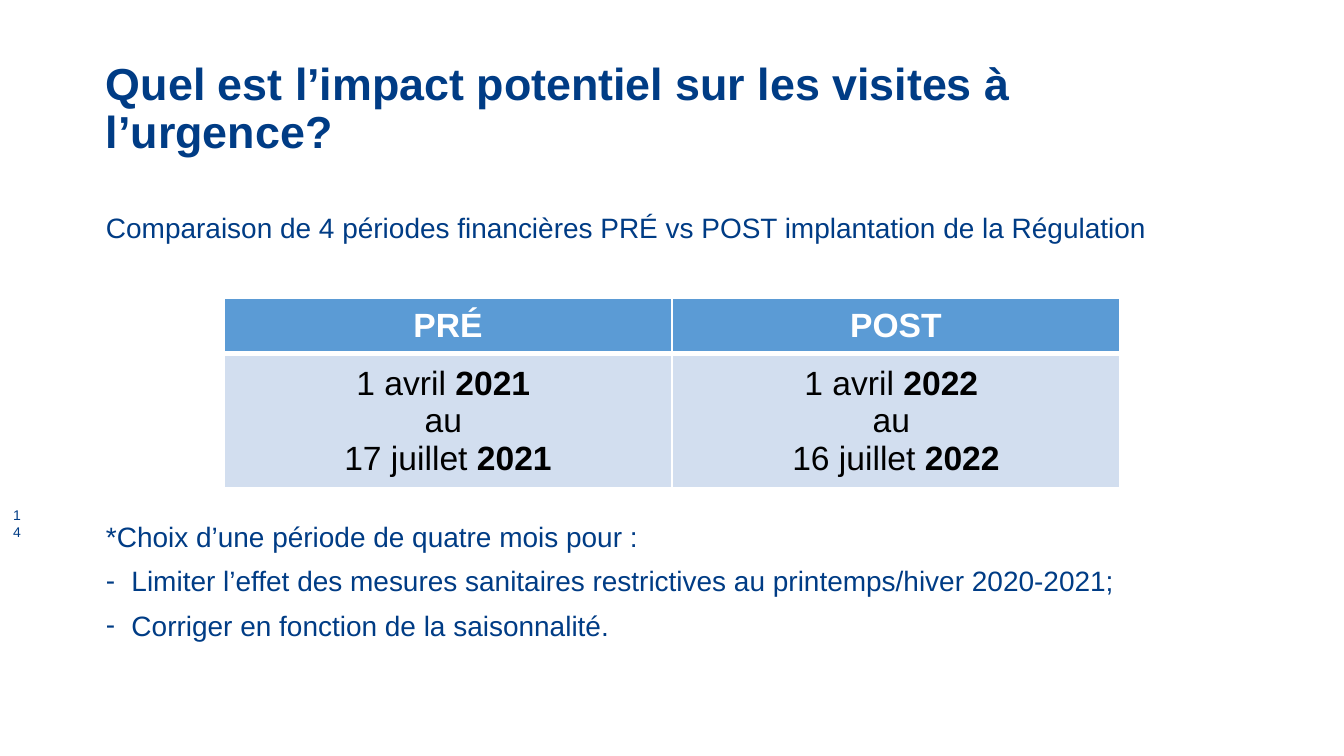
import pptx
import pptx.util
import pptx.dml.color
import pptx.enum.text
import pptx.oxml.ns
import lxml.etree

RGB = pptx.dml.color.RGBColor
ALIGN = pptx.enum.text.PP_ALIGN
ANCHOR = pptx.enum.text.MSO_ANCHOR
Pt = pptx.util.Pt
qn = pptx.oxml.ns.qn

NAVY = RGB(0x00, 0x3C, 0x85)
BLUE = RGB(0x5B, 0x9B, 0xD5)
PALE = RGB(0xD2, 0xDE, 0xEF)
WHITE = RGB(0xFF, 0xFF, 0xFF)
BLACK = RGB(0x00, 0x00, 0x00)

TITLE = "Quel est l’impact potentiel sur les visites à l’urgence?"
INTRO = "Comparaison de 4 périodes financières PRÉ vs POST implantation de la Régulation"
NOTE = "*Choix d’une période de quatre mois pour :"
GOALS = [
    "Limiter l’effet des mesures sanitaires restrictives au printemps/hiver 2020-2021;",
    "Corriger en fonction de la saisonnalité.",
]
NUMBER = "14"
HEADS = ["PRÉ", "POST"]
DATES = [
    [[("1 avril ", False), ("2021 ", True)], [("au ", False)],
     [("17 juillet ", False), ("2021", True)]],
    [[("1 avril ", False), ("2022 ", True)], [("au ", False)],
     [("16 juillet ", False), ("2022", True)]],
]

deck = pptx.Presentation()
deck.slide_width = Pt(720)
deck.slide_height = Pt(405)
slide = deck.slides.add_slide(deck.slide_layouts[6])


def wide(share):
    return round(deck.slide_width * share / 100)


def high(share):
    return round(deck.slide_height * share / 100)


def add_run(para, text, size, color, bold=False):
    run = para.add_run()
    run.text = text
    font = run.font
    font.name, font.size, font.bold = "Arial", Pt(size), bold
    font.color.rgb = color


def add_mark(para, mark):
    props = para._p.get_or_add_pPr()
    props.set("marL", str(pptx.util.Inches(0.19)))
    props.set("indent", str(-pptx.util.Inches(0.19)))
    lxml.etree.SubElement(props, qn("a:buFont")).set("typeface", "Arial")
    lxml.etree.SubElement(props, qn("a:buChar")).set("char", mark)


def add_box(left, top, width, height, lines, size, bold=False,
            anchor=ANCHOR.TOP, align=ALIGN.LEFT, pitch=0.9):
    box = slide.shapes.add_textbox(wide(left), high(top), wide(width), high(height))
    frame = box.text_frame
    frame.word_wrap = True
    frame.vertical_anchor = anchor
    for row, (text, mark) in enumerate(lines):
        para = frame.add_paragraph() if row else frame.paragraphs[0]
        if mark:
            add_mark(para, mark)
        para.alignment, para.line_spacing = align, pitch
        if row:
            para.space_before = Pt(7.5)
        para.font.size = Pt(size)
        add_run(para, text, size, NAVY, bold)


def add_edge(cell, side, points):
    props = cell._tc.get_or_add_tcPr()
    line = lxml.etree.SubElement(props, qn("a:ln" + side))
    line.set("w", str(Pt(points)))
    fill = lxml.etree.SubElement(line, qn("a:solidFill"))
    lxml.etree.SubElement(fill, qn("a:srgbClr")).set("val", str(WHITE))


def fill_cell(cell, lines, fill, color, edges):
    for side, points in edges.items():
        add_edge(cell, side, points)
    cell.fill.solid()
    cell.fill.fore_color.rgb = fill
    cell.vertical_anchor = ANCHOR.MIDDLE
    for row, parts in enumerate(lines):
        frame = cell.text_frame
        para = frame.add_paragraph() if row else frame.paragraphs[0]
        para.alignment = ALIGN.CENTER
        for text, bold in parts:
            add_run(para, text, 18, color, bold)


add_box(6.9, 7.05, 86.2, 15, [(TITLE, None)], 24, True, ANCHOR.MIDDLE)
add_box(6.9, 27.45, 83.6, 6, [(INTRO, None)], 15)
add_box(6.9, 68.35, 83.6, 22.6, [(NOTE, None)] + [(goal, "-") for goal in GOALS], 15)
add_box(0, 66.55, 2.5, 5.4, [(NUMBER, None)], 7.5,
        anchor=ANCHOR.MIDDLE, align=ALIGN.CENTER, pitch=1)

holder = slide.shapes.add_table(
    2, 2, wide(100 / 6), high(39.5), wide(200 / 3), high(21))
grid = holder.table
for row in grid.rows:
    row.height = high(7.3)
holder.height = high(21)
for col, (head, dates) in enumerate(zip(HEADS, DATES)):
    fill_cell(grid.cell(0, col), [[(head, True)]], BLUE, WHITE,
              {"L": 1, "R": 1, "T": 1, "B": 3})
    fill_cell(grid.cell(1, col), dates, PALE, BLACK, {"L": 1, "R": 1, "B": 1})

deck.save("out.pptx")
